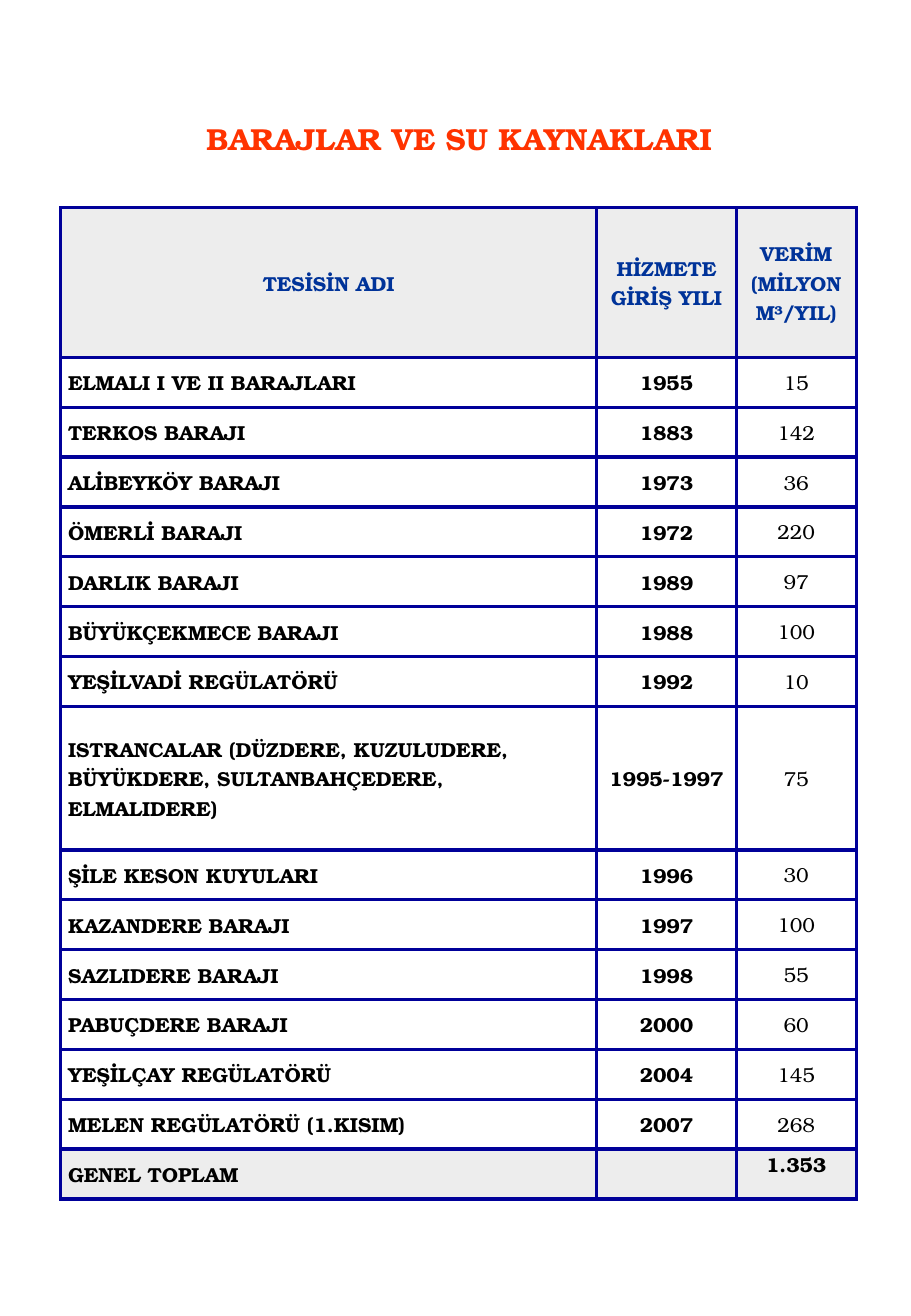
from lxml import etree
from pptx import Presentation
from pptx.dml.color import RGBColor
from pptx.enum.text import MSO_ANCHOR, PP_ALIGN
from pptx.oxml.ns import qn
from pptx.util import Inches, Pt

LEFT, CENTER = PP_ALIGN.LEFT, PP_ALIGN.CENTER
TOP, MIDDLE = MSO_ANCHOR.TOP, MSO_ANCHOR.MIDDLE

ORANGE = RGBColor(0xFF, 0x33, 0x00)
BLUE = RGBColor(0x00, 0x33, 0x99)
NAVY = RGBColor(0x00, 0x00, 0x99)
BLACK = RGBColor(0x00, 0x00, 0x00)
WHITE = RGBColor(0xFF, 0xFF, 0xFF)
GREY = RGBColor(0xED, 0xED, 0xED)

FONT = "TeX Gyre Bonum"
SLIDE_WIDTH, SLIDE_HEIGHT = 7.5, 10.83
TITLE_BOX = (0.65, 0.97, 6.26, 0.64)
TABLE_BOX = (0.5, 1.71, 6.55, 8.16)
COLUMN_SHARES = (4.42, 1.15, 0.99)
HEADER_UNITS, STREAMS_UNITS = 3, 2.88
STREAMS = "ISTRANCALAR (DÜZDERE, KUZULUDERE, BÜYÜKDERE, SULTANBAHÇEDERE, ELMALIDERE)"

HEADINGS = ("TESİSİN ADI", "HİZMETE\nGİRİŞ YILI", "VERİM\n(MİLYON M³/YIL)")
FACILITIES = (
    ("ELMALI I VE II BARAJLARI", "1955", "15"),
    ("TERKOS BARAJI", "1883", "142"),
    ("ALİBEYKÖY BARAJI", "1973", "36"),
    ("ÖMERLİ BARAJI", "1972", "220"),
    ("DARLIK BARAJI", "1989", "97"),
    ("BÜYÜKÇEKMECE BARAJI", "1988", "100"),
    ("YEŞİLVADİ REGÜLATÖRÜ", "1992", "10"),
    (STREAMS, "1995-1997", "75"),
    ("ŞİLE KESON KUYULARI", "1996", "30"),
    ("KAZANDERE BARAJI", "1997", "100"),
    ("SAZLIDERE BARAJI", "1998", "55"),
    ("PABUÇDERE BARAJI", "2000", "60"),
    ("YEŞİLÇAY REGÜLATÖRÜ", "2004", "145"),
    ("MELEN REGÜLATÖRÜ (1.KISIM)", "2007", "268"),
)
TOTALS = ("GENEL TOPLAM", "", "1.353")


def write_text(frame, text, color, size, bold=True, align=CENTER, spacing=None):
    frame.text = text
    for paragraph in frame.paragraphs:
        paragraph.alignment = align
        paragraph.line_spacing = spacing
        for attribute, value in {"name": FONT, "size": Pt(size), "bold": bold}.items():
            setattr(paragraph.font, attribute, value)
            for run in paragraph.runs:
                setattr(run.font, attribute, value)
        for run in paragraph.runs:
            run.font.color.rgb = color


def draw_borders(cell):
    properties = cell._tc.get_or_add_tcPr()
    for side in ("a:lnL", "a:lnR", "a:lnT", "a:lnB"):
        border = etree.SubElement(properties, qn(side), w=str(Pt(2.25)))
        fill = etree.SubElement(border, qn("a:solidFill"))
        etree.SubElement(fill, qn("a:srgbClr"), val=str(NAVY))


def format_cell(cell, fill, anchor):
    layout = {
        "margin_left": Inches(0.06), "margin_right": Inches(0.06),
        "margin_top": 0, "margin_bottom": 0, "vertical_anchor": anchor,
    }
    for attribute, value in layout.items():
        setattr(cell, attribute, value)
    draw_borders(cell)
    cell.fill.solid()
    cell.fill.fore_color.rgb = fill


def add_title(slide, box):
    frame = slide.shapes.add_textbox(*map(Inches, box)).text_frame
    frame.word_wrap = True
    frame.vertical_anchor = TOP
    write_text(frame, "BARAJLAR VE SU KAYNAKLARI", ORANGE, 18, spacing=0.9)


def add_facility_table(slide, box):
    width, height = box[2:]
    rows = (HEADINGS, *FACILITIES, TOTALS)
    last = len(rows) - 1
    table = slide.shapes.add_table(
        len(rows), len(HEADINGS), *map(Inches, box)).table
    table.first_row = table.horz_banding = False

    for column, share in zip(table.columns, COLUMN_SHARES):
        column.width = Inches(width * share / sum(COLUMN_SHARES))
    units = [HEADER_UNITS if row is HEADINGS else STREAMS_UNITS if row[0] == STREAMS else 1
             for row in rows]
    for table_row, unit in zip(table.rows, units):
        table_row.height = Inches(height * unit / sum(units))

    for r, row in enumerate(rows):
        for c, text in enumerate(row):
            cell = table.cell(r, c)
            is_yield = c == len(row) - 1
            format_cell(cell, GREY if r in (0, last) else WHITE,
                        TOP if r == last and is_yield else MIDDLE)
            write_text(cell.text_frame, text, BLACK if r else BLUE, 12,
                       bold=r in (0, last) or not is_yield,
                       align=LEFT if r and c == 0 else CENTER)


def main():
    presentation = Presentation()
    presentation.slide_width = Inches(SLIDE_WIDTH)
    presentation.slide_height = Inches(SLIDE_HEIGHT)
    slide = presentation.slides.add_slide(presentation.slide_layouts[6])
    add_title(slide, TITLE_BOX)
    add_facility_table(slide, TABLE_BOX)
    presentation.save("out.pptx")


if __name__ == "__main__":
    main()
